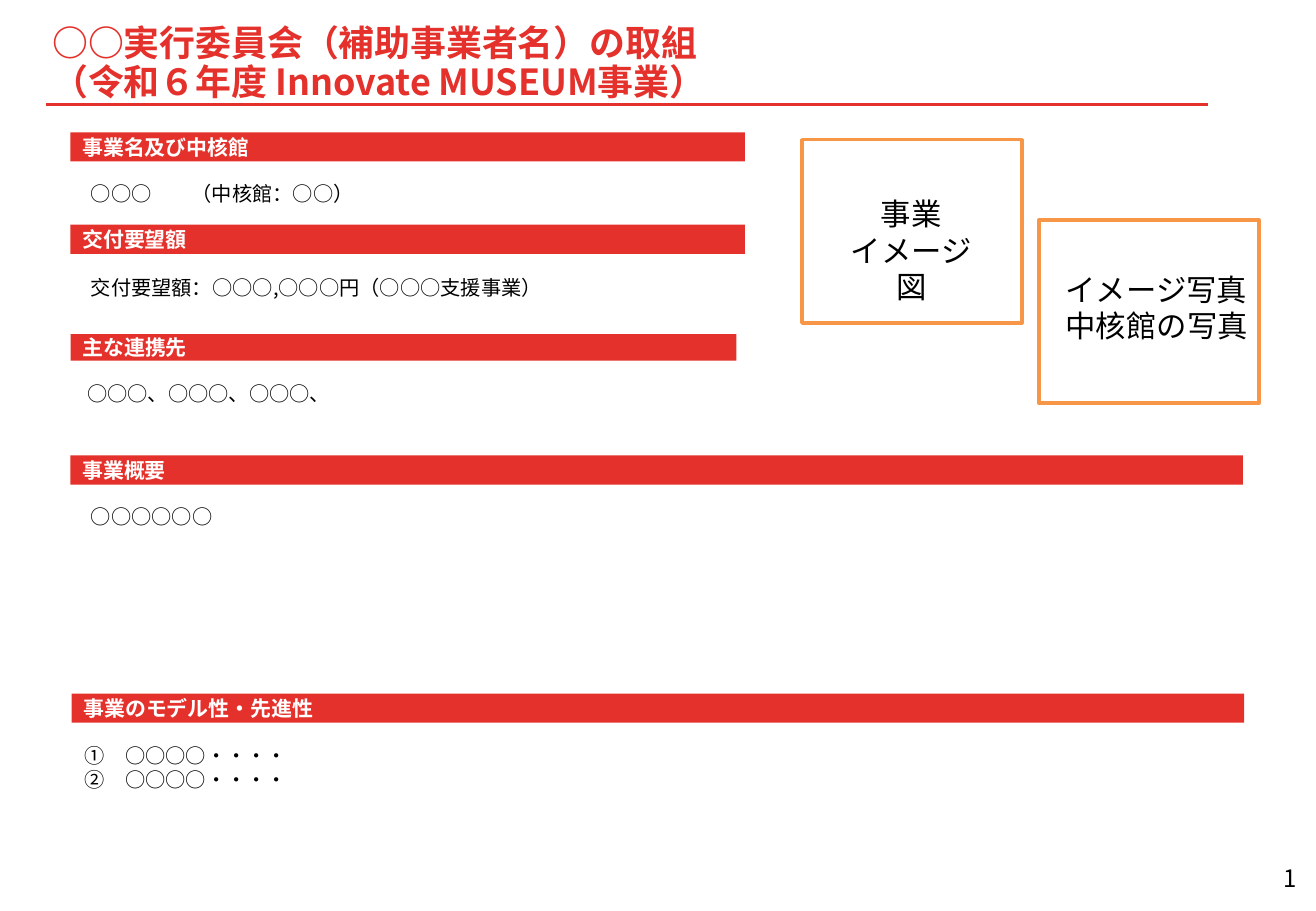
"""Build a one-page museum project summary with headed sections and image frames."""
from dataclasses import dataclass
from typing import Optional

from lxml.etree import SubElement
from pptx import Presentation
from pptx.dml.color import RGBColor
from pptx.enum.shapes import MSO_CONNECTOR, MSO_SHAPE
from pptx.enum.text import MSO_ANCHOR, PP_ALIGN
from pptx.oxml.ns import qn
from pptx.util import Emu, Inches, Pt


@dataclass(frozen=True)
class Theme:
    red: str = "E4312B"
    orange: str = "F79646"
    white: str = "FFFFFF"
    black: str = "000000"
    font: str = "Noto Sans CJK JP"
    caption_font: str = "Arial"
    title: float = 21.3
    caption: float = 18
    number: float = 14.2
    heading: float = 12.4
    body: float = 12
    rule: float = 2


@dataclass(frozen=True)
class Box:
    """Left, top, width and height in percent of the slide."""
    x: float
    y: float
    w: float
    h: float


@dataclass(frozen=True)
class Section:
    heading: str
    bar: Box
    lines: tuple[str, ...]
    body: Box


@dataclass(frozen=True)
class Frame:
    box: Box
    lines: tuple[str, ...]
    caption: Box
    align: PP_ALIGN


T = Theme()
WIDTH, HEIGHT = Inches(10.83), Inches(7.5)
TAB = Inches(0.83)
BAR_H, LINE_H = 3.2, 4
WIDE, NARROW = 89.1, 51.25
FRAME_W, FRAME_H = 16.71, 20.13
CAPTION_H = 9.47

TITLE = ("○○実行委員会（補助事業者名）の取組", "（令和６年度 Innovate MUSEUM事業）")
SECTIONS = (
    Section("事業名及び中核館", Box(5.36, 14.53, NARROW, BAR_H),
            ("○○○\t（中核館：○○）",), Box(6, 19.2, NARROW, LINE_H)),
    Section("交付要望額", Box(5.36, 24.67, NARROW, BAR_H),
            ("交付要望額：○○○,○○○円（○○○支援事業）",), Box(6, 29.6, 78.95, LINE_H)),
    Section("主な連携先", Box(5.36, 36.67, 50.6, 2.93),
            ("○○○、○○○、○○○、",), Box(5.72, 41.2, 83.47, LINE_H)),
    Section("事業概要", Box(5.36, 50, WIDE, BAR_H),
            ("○○○○○○",), Box(6, 54.67, 88.18, LINE_H)),
    Section("事業のモデル性・先進性", Box(5.45, 76.13, WIDE, BAR_H),
            ("①　○○○○・・・・", "②　○○○○・・・・"), Box(5.54, 80.93, 88.18, 6.67)),
)
FRAMES = (
    Frame(Box(60.94, 15.33, FRAME_W, FRAME_H), ("事業", "イメージ図"),
          Box(62.88, 20.8, 12.74, CAPTION_H), PP_ALIGN.CENTER),
    Frame(Box(78.95, 24.13, FRAME_W, FRAME_H), ("イメージ写真", "中核館の写真"),
          Box(80.06, 29.07, FRAME_W, CAPTION_H), PP_ALIGN.LEFT),
)


def across(share: float) -> Emu:
    return Emu(round(WIDTH * share / 100))


def down(share: float) -> Emu:
    return Emu(round(HEIGHT * share / 100))


def place(box: Box) -> tuple[Emu, Emu, Emu, Emu]:
    return across(box.x), down(box.y), across(box.w), down(box.h)


def write(sp, lines: tuple[str, ...], *, size: float, color: str = T.black,
          font: str = T.font, bold: bool = False, align: PP_ALIGN = PP_ALIGN.LEFT,
          anchor: MSO_ANCHOR = MSO_ANCHOR.TOP, spacing: Optional[float] = None,
          insets: tuple[float, float] = (0.1, 0.05), right: Optional[float] = None,
          wrap: bool = True) -> None:
    tf = sp.text_frame
    tf.word_wrap = wrap
    tf.vertical_anchor = anchor
    side, edge = insets
    tf.margin_left = Inches(side)
    tf.margin_right = Inches(side if right is None else right)
    tf.margin_top = tf.margin_bottom = Inches(edge)
    for i, line in enumerate(lines):
        p = tf.paragraphs[0] if i == 0 else tf.add_paragraph()
        p.alignment = align
        if spacing is not None:
            p.line_spacing = spacing
        if "\t" in line:
            tabs = SubElement(p._p.get_or_add_pPr(), qn("a:tabLst"))
            SubElement(tabs, qn("a:tab"), pos=str(int(TAB)), algn="l")
        r = p.add_run()
        r.text = line
        r.font.size = Pt(size)
        r.font.bold = bold
        r.font.color.rgb = RGBColor.from_string(color)
        r.font.name = font
        SubElement(r._r.get_or_add_rPr(), qn("a:ea"), typeface=T.font)


def add_text(s, box: Box, lines: tuple[str, ...], **fmt) -> None:
    write(s.shapes.add_textbox(*place(box)), lines, **fmt)


def add_rect(s, box: Box, fill: str, line: Optional[str] = None):
    sp = s.shapes.add_shape(MSO_SHAPE.RECTANGLE, *place(box))
    sp.shadow.inherit = False
    sp.fill.solid()
    sp.fill.fore_color.rgb = RGBColor.from_string(fill)
    if line is None:
        sp.line.fill.background()
    else:
        sp.line.color.rgb = RGBColor.from_string(line)
        sp.line.width = Pt(T.rule)
    return sp


def add_rule(s, left: float, right: float, y: float) -> None:
    rule = s.shapes.add_connector(MSO_CONNECTOR.STRAIGHT, across(left), down(y),
                                  across(right), down(y))
    rule.line.color.rgb = RGBColor.from_string(T.red)
    rule.line.width = Pt(T.rule)
    SubElement(rule._element.spPr, qn("a:effectLst"))


def add_section(s, section: Section) -> None:
    bar = add_rect(s, section.bar, T.red)
    write(bar, (section.heading,), size=T.heading, color=T.white, bold=True,
          anchor=MSO_ANCHOR.MIDDLE, insets=(0.1, 0), right=0)
    add_text(s, section.body, section.lines, size=T.body)


def add_frame(s, frame: Frame) -> None:
    add_rect(s, frame.box, T.white, T.orange)
    add_text(s, frame.caption, frame.lines, size=T.caption, font=T.caption_font,
             align=frame.align)


def main() -> None:
    prs = Presentation()
    prs.slide_width, prs.slide_height = WIDTH, HEIGHT
    s = prs.slides.add_slide(prs.slide_layouts[6])
    add_rule(s, 3.51, 91.78, 11.47)
    add_text(s, Box(96.49, 95.2, 2.03, 2.8), ("1",), size=T.number, wrap=False,
             align=PP_ALIGN.RIGHT, anchor=MSO_ANCHOR.BOTTOM, insets=(0, 0))
    add_text(s, Box(3.97, 2.8, 86.7, 8.53), TITLE, size=T.title, color=T.red,
             bold=True, anchor=MSO_ANCHOR.MIDDLE, spacing=0.9, insets=(0, 0))
    for section in SECTIONS:
        add_section(s, section)
    for frame in FRAMES:
        add_frame(s, frame)
    prs.save("out.pptx")


if __name__ == "__main__":
    main()
